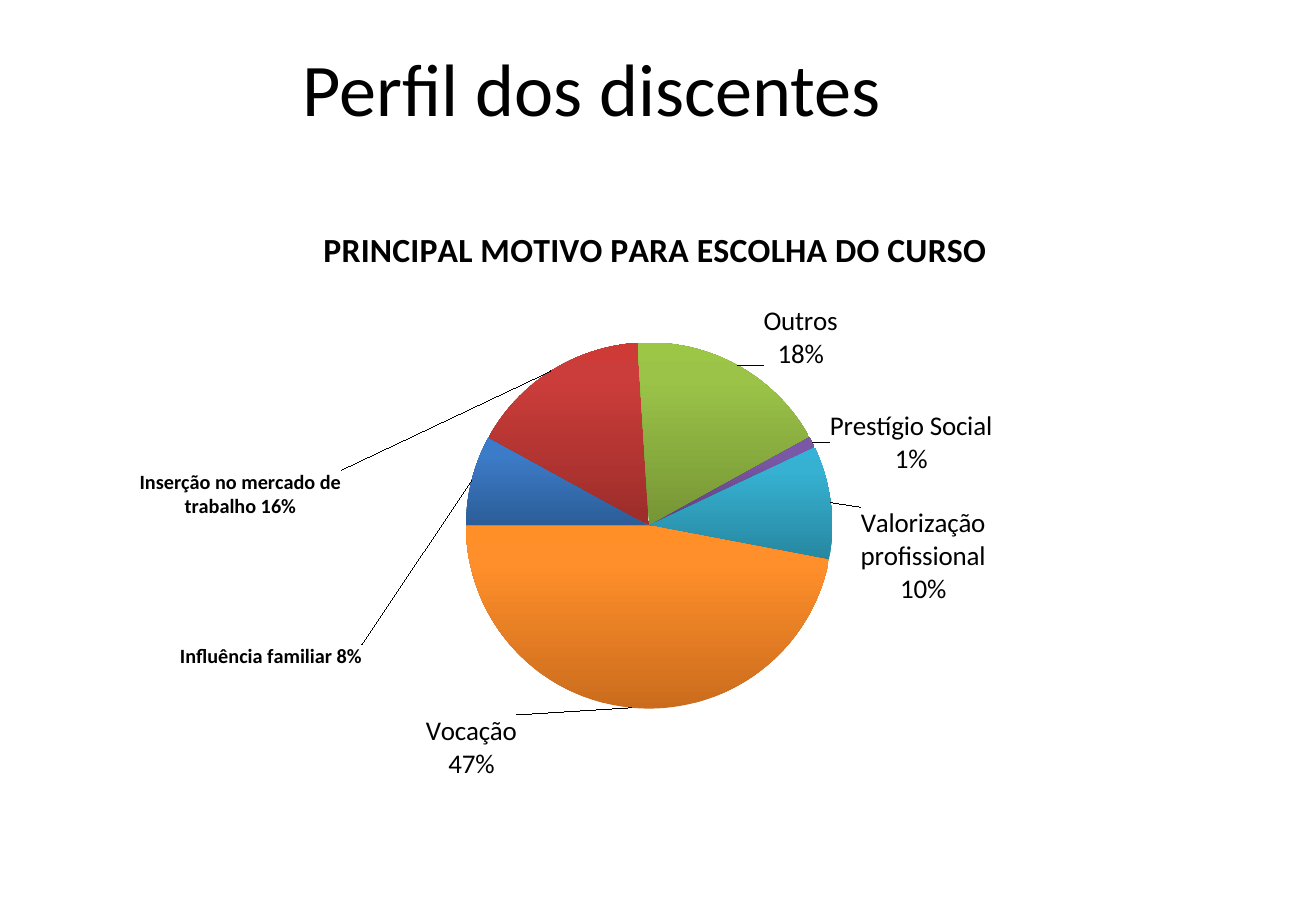
import pptx
import pptx.chart.data
import pptx.dml.color
import pptx.enum.chart
import pptx.enum.text
import pptx.oxml
import pptx.oxml.ns
import pptx.util
from dataclasses import dataclass

Pt = pptx.util.Pt
NS = pptx.oxml.ns.nsdecls("c", "a")
qn = pptx.oxml.ns.qn


@dataclass
class Theme:
    font: str = "Calibri"
    text: str = "000000"
    title: int = 44
    chart_title: int = 20
    label: int = 16
    small_label: int = 12


theme = Theme()

# category, percent, gradient from bottom to top, label shift, own label text
REASONS = [
    ("Influência familiar", 8, ("2C5D98", "3C7BC7", "3A7CCB"),
     (-0.09, 0.31), "Influência familiar 8%"),
    ("Inserção no mercado de trabalho", 16, ("9B2D2A", "CB3D3A", "CE3B37"),
     (-0.18, 0.25), "Inserção no mercado de trabalho 16%"),
    ("Outros", 18, ("769535", "9BC348", "9CC746"), (0.02, 0.02), None),
    ("Prestígio Social", 1, ("5D417E", "7B58A6", "7B57A8"), (0.01, 0.06), None),
    ("Valorização profissional", 10, ("2787A0", "36B1D2", "34B3D6"), (0.02, 0.17), None),
    ("Vocação", 47, ("CB6C1D", "FF8F2A", "FF8F26"), (-0.1, 0), None),
]


def style(font, size, bold=False):
    font.name = theme.font
    font.size = Pt(size)
    font.bold = bold
    font.color.rgb = pptx.dml.color.RGBColor.from_string(theme.text)


def layout(modes="", **values):
    """Return a manual chart layout; values are fractions of the chart."""
    items = modes + "".join(f'<c:{k} val="{v}"/>' for k, v in values.items())
    return pptx.oxml.parse_xml(
        f"<c:layout {NS}><c:manualLayout>{items}</c:manualLayout></c:layout>")


EDGE = '<c:xMode val="edge"/><c:yMode val="edge"/>'

prs = pptx.Presentation()
prs.slide_width, prs.slide_height = Pt(780), Pt(540)
s = prs.slides.add_slide(prs.slide_layouts[5])

title = s.shapes.title
title.left, title.top, title.width, title.height = Pt(0), Pt(21.6), Pt(702), Pt(90)
tf = title.text_frame
tf.vertical_anchor = pptx.enum.text.MSO_ANCHOR.TOP
p = tf.paragraphs[0]
p.alignment = pptx.enum.text.PP_ALIGN.CENTER
r = p.add_run()
r.text = "Perfil dos discentes"
style(r.font, theme.title)

data = pptx.chart.data.CategoryChartData()
data.categories = [reason[0] for reason in REASONS]
data.add_series("Series 1", [reason[1] for reason in REASONS])
chart = s.shapes.add_chart(pptx.enum.chart.XL_CHART_TYPE.PIE, Pt(38.9), Pt(111.6),
                           Pt(678.2), Pt(363.6), data).chart
style(chart.font, theme.label)
chart.has_legend = False
chart.has_title = True
r = chart.chart_title.text_frame.paragraphs[0].add_run()
r.text = "PRINCIPAL MOTIVO PARA ESCOLHA DO CURSO"
style(r.font, theme.chart_title, True)
chart_title = chart.chart_title._element
for old in chart_title.findall(qn("c:layout")):
    chart_title.remove(old)
chart_title.find(qn("c:tx")).addnext(layout(EDGE, x=0.22, y=0.05))

plot = chart.plots[0]
plot.vary_by_categories = True
pie = plot._element
plot_area = pie.getparent()
for old in plot_area.findall(qn("c:layout")):
    plot_area.remove(old)
plot_area.insert(0, layout('<c:layoutTarget val="inner"/>' + EDGE,
                           x=0.35, y=0.25, w=0.32, h=0.6))
for old in pie.findall(qn("c:firstSliceAng")):
    pie.remove(old)
pie.append(pptx.oxml.parse_xml(f'<c:firstSliceAng {NS} val="270"/>'))

series = plot.series[0]
labels = series.data_labels
labels.show_value = False
labels.show_percentage = True
labels.show_category_name = True
labels.position = pptx.enum.chart.XL_LABEL_POSITION.OUTSIDE_END
style(labels.font, theme.label)

for i, (name, percent, colors, (dx, dy), text) in enumerate(REASONS):
    point = series.points[i]
    fill = point.format.fill
    fill.gradient()
    stops = "".join(f'<a:gs pos="{pos}"><a:srgbClr val="{color}"/></a:gs>'
                    for pos, color in zip((0, 80000, 100000), colors))
    grad = point.format._element.find(".//" + qn("a:gradFill")) if hasattr(
        point.format, "_element") else fill._fill._gradFill
    grad.getparent().replace(grad, pptx.oxml.parse_xml(
        f'<a:gradFill {NS} rotWithShape="1"><a:gsLst>{stops}</a:gsLst>'
        '<a:lin ang="16200000" scaled="0"/></a:gradFill>'))

    label = point.data_label
    label.position = pptx.enum.chart.XL_LABEL_POSITION.OUTSIDE_END
    if text:
        r = label.text_frame.paragraphs[0].add_run()
        r.text = text
        style(r.font, theme.small_label, True)
    else:
        style(label.font, theme.label)
    d = series._element.findall(".//" + qn("c:dLbl"))[i]
    for old in d.findall(qn("c:layout")):
        d.remove(old)
    d.find(qn("c:idx")).addnext(layout(x=dx, y=dy))
    for tag, shown in (("showVal", 0), ("showCatName", 1), ("showPercent", 1)):
        d.find(qn("c:" + tag)).set("val", str(shown))
    d.append(pptx.oxml.parse_xml(f"<c:separator {NS}>\n</c:separator>"))

prs.save("out.pptx")
